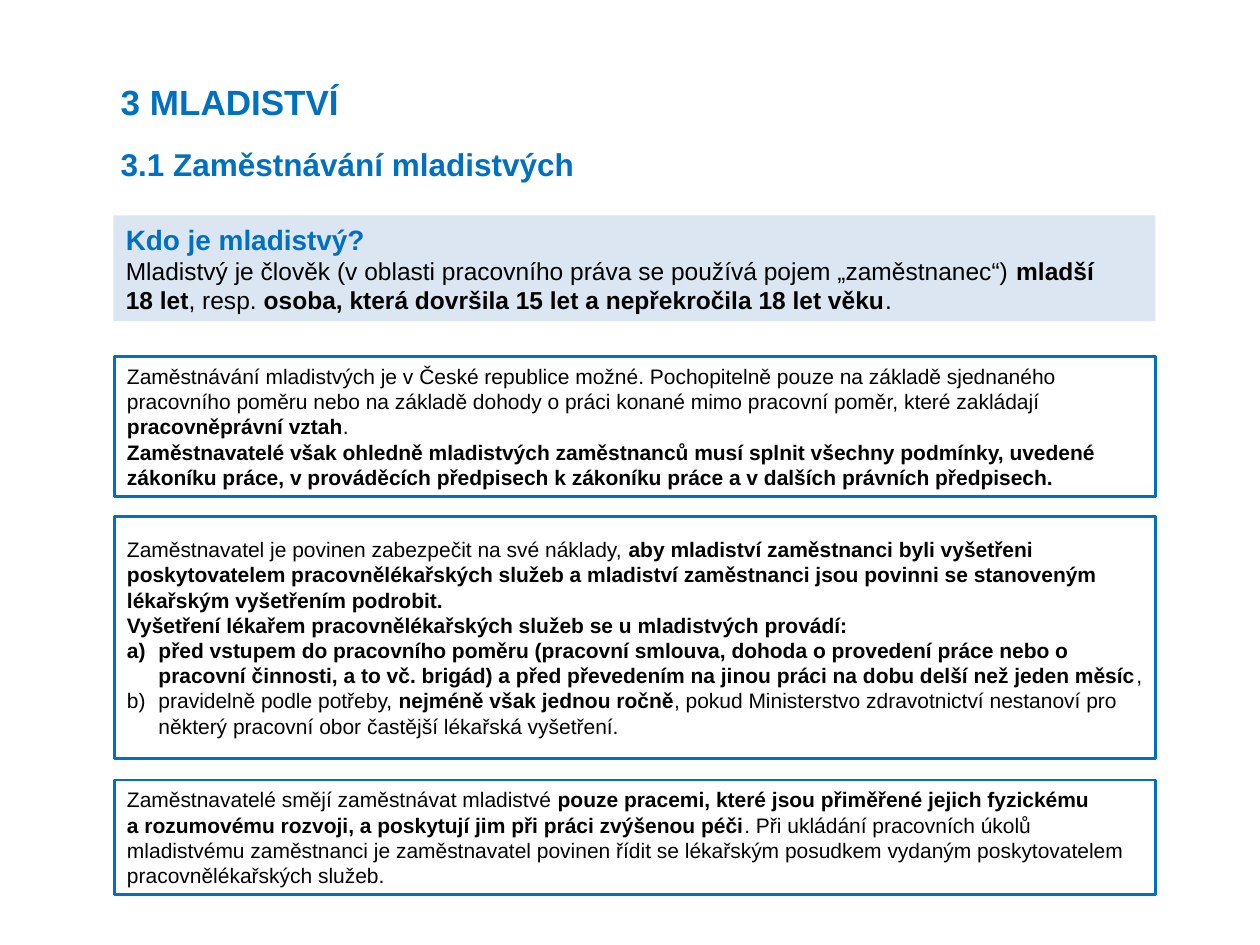
"""Builds the slide on the employment of adolescents."""
from lxml.etree import SubElement
from pptx import Presentation
from pptx.dml.color import RGBColor
from pptx.enum.shapes import MSO_SHAPE as Shape
from pptx.enum.text import MSO_ANCHOR as Anchor, PP_ALIGN as Align
from pptx.oxml.ns import qn
from pptx.util import Inches, Pt

BLUE = RGBColor(0x00, 0x70, 0xC0)
PALE_BLUE = RGBColor(0xDC, 0xE6, 0xF2)
BLACK = RGBColor(0x00, 0x00, 0x00)


def write_paragraph(paragraph, text, size=12, color=BLACK, align=Align.LEFT, lettered=False):
    """Writes text in which ** switches bold and a newline breaks the line."""
    paragraph.alignment = align
    if lettered:
        properties = paragraph._p.get_or_add_pPr()
        properties.set("marL", str(Inches(0.25)))
        properties.set("indent", str(-Inches(0.25)))
        SubElement(properties, qn("a:buFont"), typeface="+mj-lt")
        SubElement(properties, qn("a:buAutoNum"), type="alphaLcParenR")
    for index, part in enumerate(text.split("**")):
        for line_index, line in enumerate(part.split("\n")):
            if line_index:
                paragraph.add_line_break()
            if line:
                run = paragraph.add_run()
                run.text = line
                run.font.name = "Arial"
                run.font.size = Pt(size)
                run.font.bold = index % 2 == 1
                run.font.color.rgb = color


def add_panel(slide, left, top, width, height):
    """Adds an empty rectangle with left-aligned, vertically centred text."""
    panel = slide.shapes.add_shape(
        Shape.RECTANGLE, Inches(left), Inches(top), Inches(width), Inches(height))
    panel.shadow.inherit = False
    panel.text_frame.word_wrap = True
    panel.text_frame.vertical_anchor = Anchor.MIDDLE
    return panel


presentation = Presentation()
presentation.slide_width = Inches(10)
presentation.slide_height = Inches(7.5)
slide = presentation.slides.add_slide(presentation.slide_layouts[6])

headings = [
    ("**3 MLADISTVÍ**", 20, 0.59, 1.95, 0.44),
    ("**3.1 Zaměstnávání mladistvých**", 18, 1.1, 3.83, 0.4),
]
for text, size, top, width, height in headings:
    heading = slide.shapes.add_textbox(
        Inches(0.86), Inches(top), Inches(width), Inches(height))
    heading.text_frame.word_wrap = False
    write_paragraph(heading.text_frame.paragraphs[0], text, size=size, color=BLUE,
                    align=Align.JUSTIFY)

definition = add_panel(slide, 0.9, 1.71, 8.27, 0.84)
definition.fill.solid()
definition.fill.fore_color.rgb = PALE_BLUE
definition.line.fill.background()
write_paragraph(definition.text_frame.paragraphs[0], "**Kdo je mladistvý?**",
                size=16, color=BLUE)
write_paragraph(
    definition.text_frame.add_paragraph(),
    "Mladistvý je člověk (v oblasti pracovního práva se používá pojem „zaměstnanec“) "
    "**mladší \n18 let**, resp. **osoba, která dovršila 15 let a nepřekročila 18 let věku**.",
    size=14)

rules = [
    (2.83, 1.11, [
        ("Zaměstnávání mladistvých je v České republice možné. Pochopitelně pouze na základě "
         "sjednaného pracovního poměru nebo na základě dohody o práci konané mimo pracovní "
         "poměr, které zakládají **pracovněprávní vztah**.", False),
        ("**Zaměstnavatelé však ohledně mladistvých zaměstnanců musí splnit všechny podmínky, "
         "uvedené zákoníku práce, v prováděcích předpisech k zákoníku práce a v dalších "
         "právních předpisech.**", False),
    ]),
    (4.1, 1.92, [
        ("Zaměstnavatel je povinen zabezpečit na své náklady, **aby mladiství zaměstnanci byli "
         "vyšetřeni poskytovatelem pracovnělékařských služeb a mladiství zaměstnanci jsou "
         "povinni se stanoveným lékařským vyšetřením podrobit.**", False),
        ("**Vyšetření lékařem pracovnělékařských služeb se u mladistvých provádí:**", False),
        ("**před vstupem do pracovního poměru (pracovní smlouva, dohoda o provedení práce nebo "
         "o pracovní činnosti, a to vč. brigád) a před převedením na jinou práci na dobu delší "
         "než jeden měsíc**,", True),
        ("pravidelně podle potřeby, **nejméně však jednou ročně**, pokud Ministerstvo "
         "zdravotnictví nestanoví pro některý pracovní obor častější lékařská vyšetření.", True),
    ]),
    (6.19, 0.91, [
        ("Zaměstnavatelé smějí zaměstnávat mladistvé **pouze pracemi, které jsou přiměřené "
         "jejich fyzickému \na rozumovému rozvoji, a poskytují jim při práci zvýšenou péči**. "
         "Při ukládání pracovních úkolů mladistvému zaměstnanci je zaměstnavatel povinen řídit "
         "se lékařským posudkem vydaným poskytovatelem pracovnělékařských služeb.", False),
    ]),
]
for top, height, paragraphs in rules:
    panel = add_panel(slide, 0.91, top, 8.26, height)
    panel.fill.background()
    panel.line.color.rgb = BLUE
    panel.line.width = Pt(1.5)
    frame = panel.text_frame
    for index, (text, lettered) in enumerate(paragraphs):
        paragraph = frame.add_paragraph() if index else frame.paragraphs[0]
        write_paragraph(paragraph, text, lettered=lettered)

presentation.save("out.pptx")
